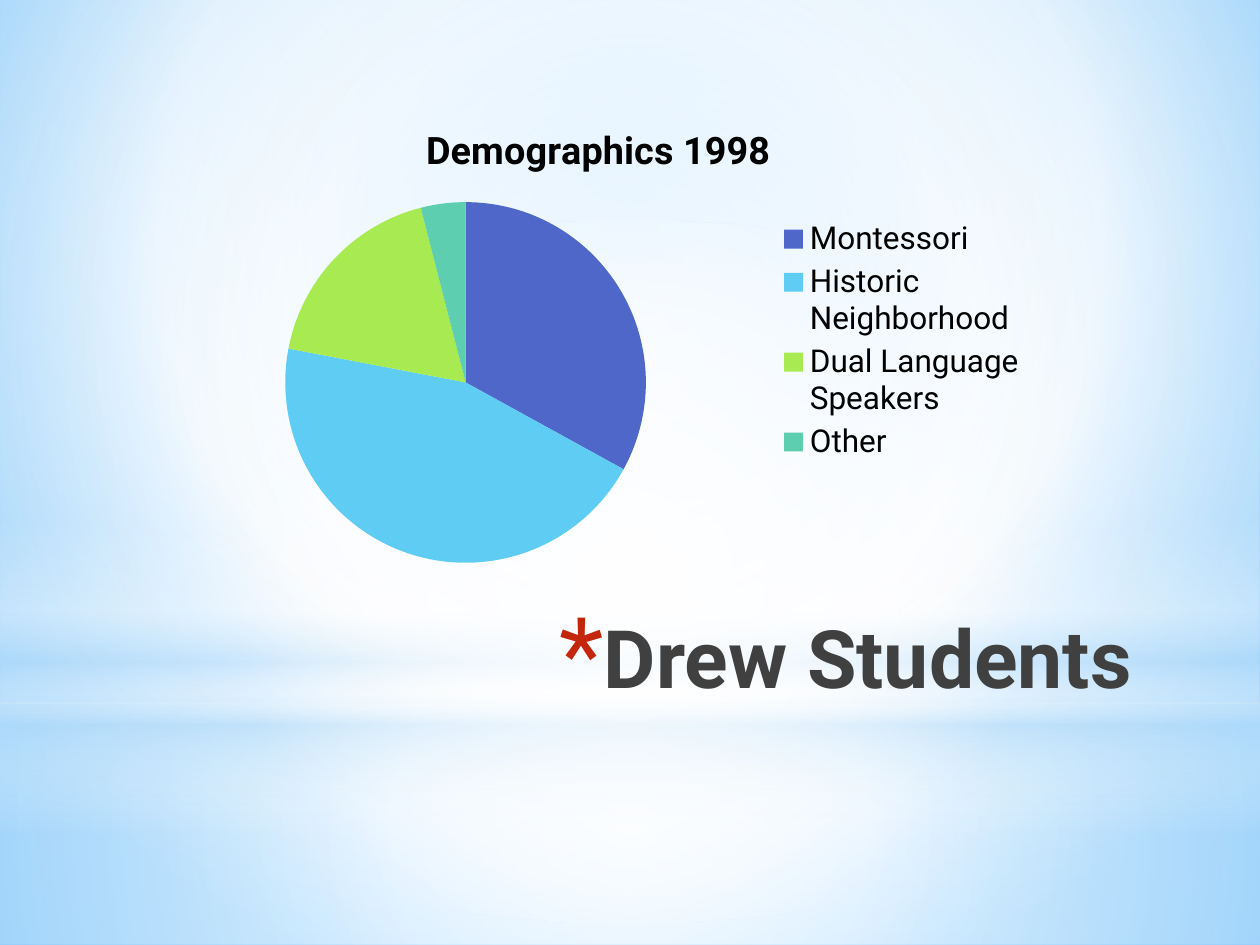
from typing import NamedTuple, Optional

from lxml.etree import SubElement
from pptx import Presentation
from pptx.chart.data import CategoryChartData
from pptx.dml.color import RGBColor
from pptx.enum.chart import XL_CHART_TYPE, XL_LEGEND_POSITION
from pptx.enum.shapes import MSO_SHAPE
from pptx.enum.text import MSO_ANCHOR, MSO_AUTO_SIZE, PP_ALIGN
from pptx.oxml.ns import qn
from pptx.util import Inches, Pt

WIDTH, HEIGHT = Inches(10), Inches(7.5)
FONT = "Roboto"

BLACK = RGBColor(0x00, 0x00, 0x00)
WHITE = RGBColor(0xFF, 0xFF, 0xFF)
CHARCOAL = RGBColor(0x40, 0x40, 0x40)
RED = RGBColor(0xC3, 0x26, 0x0C)
MIST = RGBColor(0xB4, 0xDC, 0xFA)
SKY = RGBColor(0x9E, 0xD5, 0xFF)
AZURE = RGBColor(0x5B, 0xB9, 0xFF)
INDIGO = RGBColor(0x4E, 0x67, 0xC8)
CYAN = RGBColor(0x5E, 0xCC, 0xF3)
LIME = RGBColor(0xA7, 0xEA, 0x52)
TEAL = RGBColor(0x5D, 0xCE, 0xAF)


class Box(NamedTuple):
    """Left, top, width and height as shares of the slide."""
    left: float
    top: float
    width: float
    height: float

    def emu(self) -> tuple[int, int, int, int]:
        return (int(self.left * WIDTH), int(self.top * HEIGHT),
                int(self.width * WIDTH), int(self.height * HEIGHT))


class Stop(NamedTuple):
    position: int
    color: RGBColor
    opacity: int = 100


class Glow(NamedTuple):
    """Circular around a focus (left, top, right, bottom), or vertical without one."""
    stops: tuple[Stop, ...]
    focus: Optional[tuple[int, int, int, int]] = (50, 50, 50, 50)


class Layer(NamedTuple):
    preset: MSO_SHAPE
    box: Box
    glow: Glow


class Group(NamedTuple):
    name: str
    percent: int
    color: RGBColor


HORIZON = 0.744
BACKDROP = Glow((Stop(0, SKY), Stop(60, WHITE), Stop(100, AZURE)), (20, 10, 20, 60))
LAYERS = (
    Layer(MSO_SHAPE.RECTANGLE, Box(0, HORIZON, 1, 1 - HORIZON),
          Glow((Stop(0, WHITE, 91), Stop(37, WHITE, 76), Stop(100, MIST, 79)))),
    Layer(MSO_SHAPE.RECTANGLE, Box(0, 0, 1, HORIZON),
          Glow((Stop(0, WHITE, 89), Stop(48, WHITE, 62), Stop(100, MIST, 79)))),
    Layer(MSO_SHAPE.RECTANGLE, Box(0, 0.55, 1, 1 / 3),
          Glow((Stop(0, WHITE, 0), Stop(29, WHITE, 30), Stop(45, MIST, 40),
                Stop(55, WHITE, 26), Stop(65, MIST, 60), Stop(100, WHITE, 0)), None)),
    Layer(MSO_SHAPE.OVAL, Box(0, 0.233, 1, HORIZON),
          Glow((Stop(0, WHITE), Stop(56, WHITE, 0)))),
)
GROUPS = (
    Group("Montessori", 33, INDIGO),
    Group("Historic Neighborhood", 45, CYAN),
    Group("Dual Language Speakers", 18, LIME),
    Group("Other", 4, TEAL),
)
TITLE_BOX = Box(0.196, 0.637, 0.712, 0.167)
CHART_BOX = Box(0.125, 0.107, 0.7, 0.507)


def apply_glow(owner, fill, glow: Glow) -> None:
    fill.gradient()
    gradient = next(owner.iter(qn("a:gradFill")))
    for child in list(gradient):
        gradient.remove(child)
    stop_list = SubElement(gradient, qn("a:gsLst"))
    for stop in glow.stops:
        mark = SubElement(stop_list, qn("a:gs"), pos=str(stop.position * 1000))
        color = SubElement(mark, qn("a:srgbClr"), val=str(stop.color))
        if stop.opacity < 100:
            SubElement(color, qn("a:alpha"), val=str(stop.opacity * 1000))
    if glow.focus is None:
        SubElement(gradient, qn("a:lin"), ang="5400000", scaled="0")
    else:
        circle = SubElement(gradient, qn("a:path"), path="circle")
        sides = {side: str(share * 1000) for side, share in zip("ltrb", glow.focus)}
        SubElement(circle, qn("a:fillToRect"), **sides)


def draw_layer(slide, layer: Layer) -> None:
    shape = slide.shapes.add_shape(layer.preset, *layer.box.emu())
    shape.shadow.inherit = False
    shape.line.fill.background()
    apply_glow(shape._element.spPr, shape.fill, layer.glow)


def write_title(slide, text: str) -> None:
    title = slide.shapes.title
    title.left, title.top, title.width, title.height = TITLE_BOX.emu()
    slide.shapes._spTree.append(title._element)  # in front of the backdrop
    frame = title.text_frame
    frame.vertical_anchor = MSO_ANCHOR.TOP
    frame.auto_size = MSO_AUTO_SIZE.NONE
    frame.word_wrap = True
    paragraph = frame.paragraphs[0]
    paragraph.alignment = PP_ALIGN.RIGHT
    run = paragraph.add_run()
    run.text = text
    font = run.font
    font.name, font.size, font.bold = FONT, Pt(46), True
    font.color.rgb = CHARCOAL

    # Hanging asterisk
    props = paragraph._p.get_or_add_pPr()
    props.set("marL", str(Inches(0.35)))
    props.set("indent", str(-Inches(0.35)))
    SubElement(SubElement(props, qn("a:buClr")), qn("a:srgbClr"), val=str(RED))
    SubElement(props, qn("a:buSzPct"), val="128000")
    SubElement(props, qn("a:buFont"), typeface=FONT)
    SubElement(props, qn("a:buChar"), char="*")


def draw_demographics(slide, heading: str) -> None:
    data = CategoryChartData()
    data.categories = [group.name for group in GROUPS]
    data.add_series("Series 1", [group.percent for group in GROUPS])
    chart = slide.shapes.add_chart(XL_CHART_TYPE.PIE, *CHART_BOX.emu(), data).chart
    chart.font.name, chart.font.size = FONT, Pt(18)
    chart.font.color.rgb = BLACK

    chart.has_title = True
    run = chart.chart_title.text_frame.paragraphs[0].add_run()
    run.text = heading
    run.font.name, run.font.size, run.font.bold = FONT, Pt(21.6), True
    run.font.color.rgb = BLACK

    chart.has_legend = True
    chart.legend.position = XL_LEGEND_POSITION.RIGHT
    chart.legend.include_in_layout = False

    pie = chart.plots[0]
    pie.vary_by_categories = True
    for index, group in enumerate(GROUPS):
        slice_format = pie.series[0].points[index].format
        slice_format.fill.solid()
        slice_format.fill.fore_color.rgb = group.color
        slice_format.line.fill.background()


def main() -> None:
    deck = Presentation()
    deck.slide_width, deck.slide_height = WIDTH, HEIGHT
    slide = deck.slides.add_slide(deck.slide_layouts[5])

    # Backdrop
    backdrop_fill = slide.background.fill
    apply_glow(slide._element, backdrop_fill, BACKDROP)
    for layer in LAYERS:
        draw_layer(slide, layer)

    # Content
    write_title(slide, "Drew Students")
    draw_demographics(slide, "Demographics 1998")
    deck.save("out.pptx")


if __name__ == "__main__":
    main()
